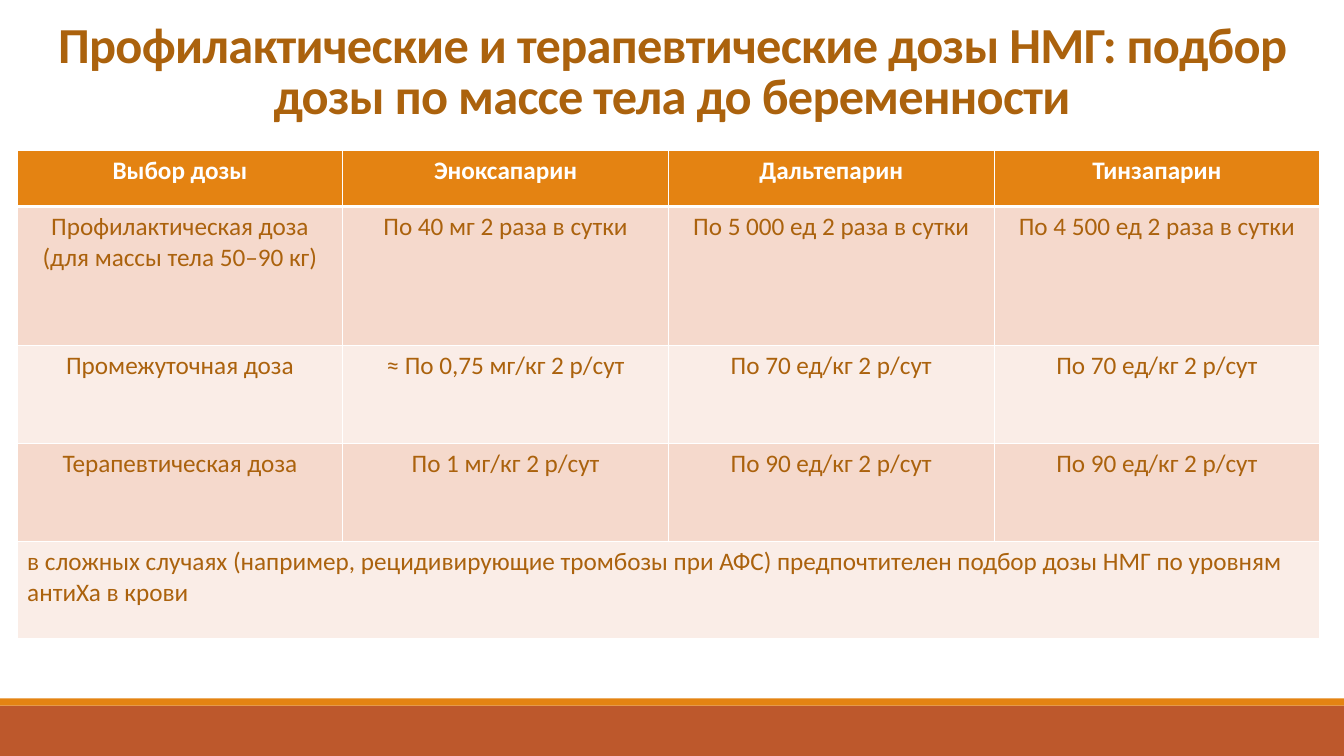
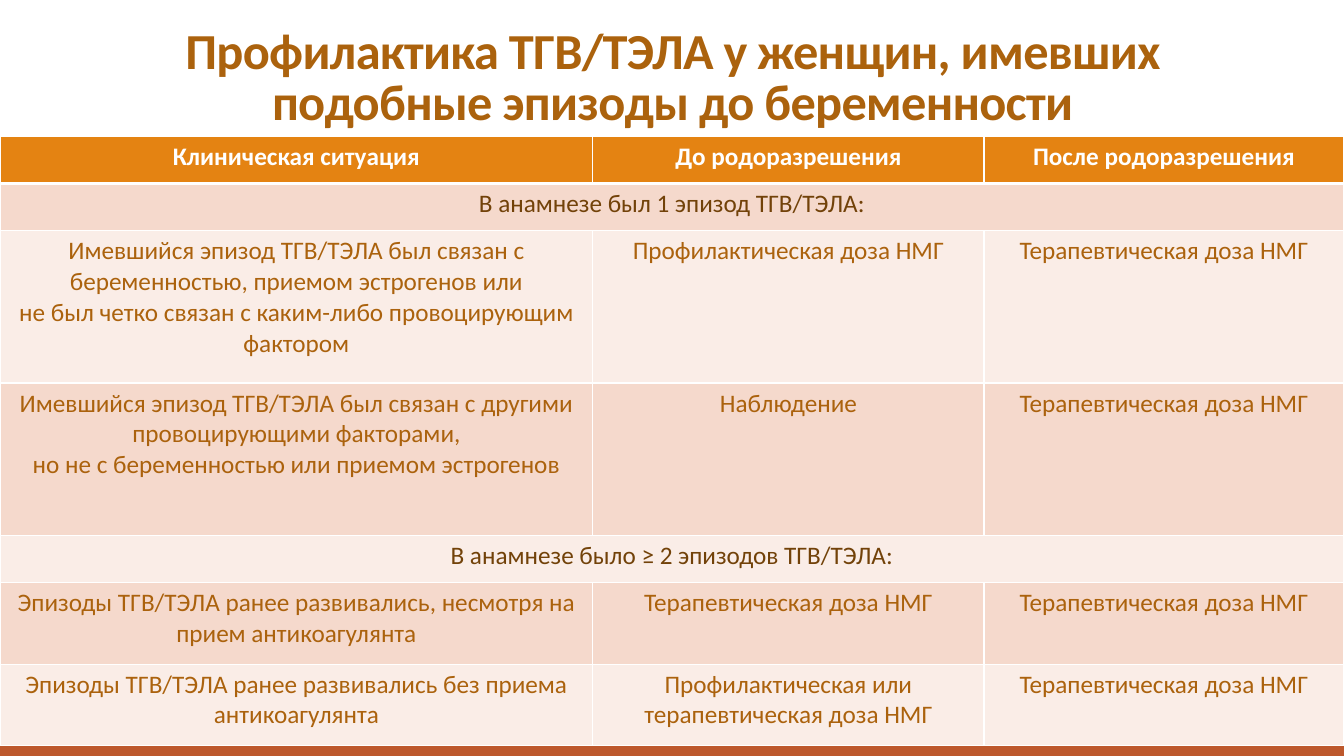
"""Builds two slides with tables of heparin doses and prophylaxis in pregnancy."""
from pptx import Presentation
from pptx.dml.color import RGBColor
from pptx.enum.shapes import MSO_SHAPE as SHAPE
from pptx.enum.text import MSO_ANCHOR as ANCHOR, MSO_AUTO_SIZE as AUTO, PP_ALIGN as ALIGN
from pptx.oxml.ns import qn
from pptx.util import Inches, Pt
from lxml.etree import SubElement

FONT = "Calibri"
WHITE, ORANGE, RUST, BROWN, DARK = "FFFFFF", "E48312", "BD582C", "AB620D", "724209"
ROW_FILLS = ("FAEDE7", "F5D9CC")
WIDTH, HEIGHT = 13.33, 7.5
BANDS = [(7, 0.5, RUST), (6.93, 0.07, ORANGE)]
THERAPEUTIC = "Терапевтическая доза НМГ"

SLIDES = [
    {
        "title": "Профилактические и терапевтические дозы НМГ: подбор дозы по массе тела до беременности",
        "title_box": (0, -0.16, WIDTH, 1.45),
        "table_at": (0.17, 1.49),
        "cols": [3.23] * 4,
        "heights": [0.56, 1.38, 0.97, 0.97, 0.97],
        "wide_style": (ALIGN.LEFT, BROWN),
        "rows": [
            ("Выбор дозы", "Эноксапарин", "Дальтепарин", "Тинзапарин"),
            ("Профилактическая доза (для массы тела 50–90 кг)", "По 40 мг 2 раза в сутки",
             "По 5 000 ед 2 раза в сутки", "По 4 500 ед 2 раза в сутки"),
            ("Промежуточная доза", "≈ По 0,75 мг/кг 2 р/сут",
             "По 70 ед/кг 2 р/сут", "По 70 ед/кг 2 р/сут"),
            ("Терапевтическая доза", "По 1 мг/кг 2 р/сут",
             "По 90 ед/кг 2 р/сут", "По 90 ед/кг 2 р/сут"),
            ("в сложных случаях (например, рецидивирующие тромбозы при АФС) предпочтителен "
             "подбор дозы НМГ по уровням антиХа в крови",),
        ],
    },
    {
        "title": "Профилактика ТГВ/ТЭЛА у женщин, имевших подобные эпизоды до беременности",
        "title_box": (0.92, -0.1, 11.5, 1.45),
        "table_at": (0, 1.35),
        "cols": [5.88, 3.88, 3.57],
        "heights": [0.47, 0.47, 1.51, 1.51, 0.47, 0.81, 0.81],
        "wide_style": (ALIGN.CENTER, DARK),
        "rows": [
            ("Клиническая ситуация", "До родоразрешения", "После родоразрешения"),
            ("В анамнезе был 1 эпизод ТГВ/ТЭЛА:",),
            ("Имевшийся эпизод ТГВ/ТЭЛА был связан с беременностью, приемом эстрогенов или\n"
             "не был четко связан с каким-либо провоцирующим фактором",
             "Профилактическая доза НМГ", THERAPEUTIC),
            ("Имевшийся эпизод ТГВ/ТЭЛА был связан с другими провоцирующими факторами,\n"
             "но не с беременностью или приемом эстрогенов", "Наблюдение", THERAPEUTIC),
            ("В анамнезе было ≥ 2 эпизодов ТГВ/ТЭЛА:",),
            ("Эпизоды ТГВ/ТЭЛА ранее развивались, несмотря на прием антикоагулянта",
             THERAPEUTIC, THERAPEUTIC),
            ("Эпизоды ТГВ/ТЭЛА ранее развивались без приема антикоагулянта",
             "Профилактическая или\nтерапевтическая доза НМГ", THERAPEUTIC),
        ],
    },
]


def rgb(color):
    return RGBColor.from_string(color)


def paint(obj, color):
    obj.fill.solid()
    obj.fill.fore_color.rgb = rgb(color)


def write(tf, text, size, color, bold, align):
    for i, line in enumerate(text.split("\n")):
        p = tf.add_paragraph() if i else tf.paragraphs[0]
        p.alignment = align
        r = p.add_run()
        r.text = line
        r.font.name, r.font.size, r.font.bold = FONT, Pt(size), bold
        r.font.color.rgb = rgb(color)


def add_bands(layout, slide):
    """Draws the footer bands and moves them to the shared layout."""
    for ph in list(layout.placeholders):
        if ph.placeholder_format.idx:
            ph.element.getparent().remove(ph.element)
    for top, height, color in BANDS:
        sp = slide.shapes.add_shape(SHAPE.RECTANGLE, 0, Inches(top), Inches(WIDTH), Inches(height))
        sp.shadow.inherit = False
        sp.line.fill.background()
        paint(sp, color)
        layout.shapes.element.append(sp.element)


def set_title(slide, text, box):
    title = slide.shapes.title
    title.left, title.top, title.width, title.height = map(Inches, box)
    tf = title.text_frame
    tf.word_wrap, tf.auto_size, tf.vertical_anchor = True, AUTO.NONE, ANCHOR.BOTTOM
    write(tf, text, 36, BROWN, True, ALIGN.CENTER)
    p = tf.paragraphs[0]
    p.line_spacing = 0.85
    p.runs[0].font._element.set("spc", "-50")


def set_borders(cell, row):
    tcPr = cell._tc.get_or_add_tcPr()
    widths = {"lnL": 1, "lnR": 1, "lnT": 3 if row == 1 else 1, "lnB": 1 if row else 3}
    for tag, width in widths.items():
        ln = SubElement(tcPr, qn(f"a:{tag}"), w=str(Pt(width)))
        SubElement(SubElement(ln, qn("a:solidFill")), qn("a:srgbClr"), val=WHITE)


def add_table(slide, data):
    rows, cols, heights = data["rows"], data["cols"], data["heights"]
    left, top = data["table_at"]
    frame = slide.shapes.add_table(len(rows), len(cols), Inches(left), Inches(top),
                                   Inches(sum(cols)), Inches(sum(heights)))
    table = frame.table
    table.horz_banding = False
    for col, width in zip(table.columns, cols):
        col.width = Inches(width)
    for i, texts in enumerate(rows):
        table.rows[i].height = Inches(heights[i])
        align, color = ALIGN.CENTER, BROWN if i else WHITE
        if len(texts) == 1:
            table.cell(i, 0).merge(table.cell(i, len(cols) - 1))
            align, color = data["wide_style"]
        for j in range(len(cols)):
            cell = table.cell(i, j)
            set_borders(cell, i)
            paint(cell, ROW_FILLS[i % 2] if i else ORANGE)
            if j < len(texts):
                write(cell.text_frame, texts[j], 18, color, i == 0, align)


def main():
    prs = Presentation()
    prs.slide_width, prs.slide_height = Inches(WIDTH), Inches(HEIGHT)
    layout = prs.slide_layouts[5]
    for i, data in enumerate(SLIDES):
        slide = prs.slides.add_slide(layout)
        if i == 0:
            add_bands(layout, slide)
        set_title(slide, data["title"], data["title_box"])
        add_table(slide, data)
    prs.save("out.pptx")


if __name__ == "__main__":
    main()
